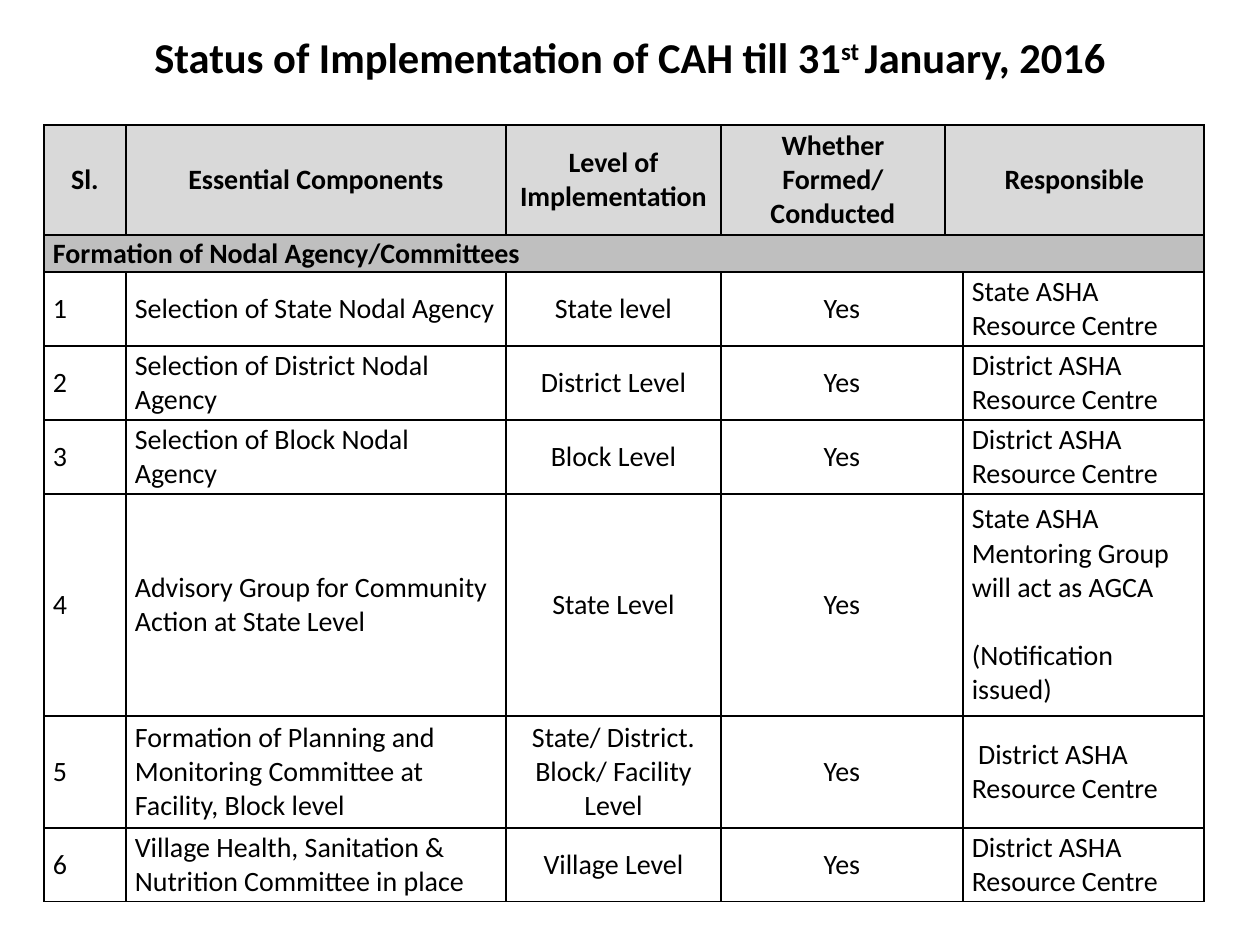
from lxml import etree
from pptx import Presentation
from pptx import util as u
from pptx.dml.color import RGBColor
from pptx.enum import text
from pptx.oxml import ns

PX = 914400 // 126
COLUMNS = [82, 380, 215, 224, 18, 241]
ROWS = [110, 37, 74, 74, 74, 222, 112, 74]
HEADINGS = ["Sl.", "Essential Components", "Level of Implementation",
            "Whether Formed/ Conducted", "Responsible"]
SECTION = "Formation of Nodal Agency/Committees"
DISTRICT = "District ASHA Resource Centre"
COMMITTEES = [
    ("Selection of State Nodal Agency", "State level", "State ASHA Resource Centre"),
    ("Selection of District Nodal Agency", "District Level", DISTRICT),
    ("Selection of Block Nodal Agency", "Block Level", DISTRICT),
    ("Advisory Group for Community Action at State Level", "State Level",
     "State ASHA Mentoring Group will act as AGCA\n(Notification issued)"),
    ("Formation of Planning and Monitoring Committee at Facility, Block level",
     "State/ District. Block/ Facility Level", " " + DISTRICT),
    ("Village Health, Sanitation & Nutrition Committee in place",
     "Village Level", DISTRICT),
]


def px(length):
    return u.Emu(length * PX)


def color(value):
    return RGBColor.from_string(value)


class SlideBuilder:
    font = "Calibri"
    ink = "000000"
    header_fill = "D9D9D9"
    section_fill = "BFBFBF"
    title_size = 24.3
    body_size = 16

    def __init__(self, page):
        self.page = page

    def style(self, para, size, bold=False, centered=False):
        para.font.name = self.font
        para.font.size = u.Pt(size)
        para.font.bold = bold
        para.font.color.rgb = color(self.ink)
        para.alignment = text.PP_ALIGN.CENTER if centered else text.PP_ALIGN.LEFT

    def title(self, left, top, width, height, spans):
        """Add a heading from (text, is_superscript) pairs."""
        frame = self.page.shapes.add_textbox(
            px(left), px(top), px(width), px(height)).text_frame
        frame.word_wrap = True
        frame.margin_top = px(5)
        para = frame.paragraphs[0]
        self.style(para, self.title_size, bold=True, centered=True)
        for words, raised in spans:
            span = para.add_run()
            span.text = words
            if raised:
                span.font._element.set("baseline", "30000")

    def table(self, left, top, columns, rows):
        table = self.page.shapes.add_table(
            len(rows), len(columns), px(left), px(top),
            px(sum(columns)), px(sum(rows))).table
        table.first_row = table.horz_banding = False
        for column, width in zip(table.columns, columns):
            column.width = px(width)
        for row, height in zip(table.rows, rows):
            row.height = px(height)
        for cell in table.iter_cells():
            self.borders(cell)
            cell.fill.background()
        return table

    def borders(self, cell):
        properties = cell._tc.get_or_add_tcPr()
        for side in ("a:lnL", "a:lnR", "a:lnT", "a:lnB"):
            line = etree.SubElement(properties, ns.qn(side), w=str(u.Pt(1)))
            fill = etree.SubElement(line, ns.qn("a:solidFill"))
            etree.SubElement(fill, ns.qn("a:srgbClr"), val=self.ink)

    def cell(self, cell, words, bold=False, centered=False, fill=None):
        """Fill a cell; each line of words is a paragraph, a line apart."""
        cell.margin_left = cell.margin_right = px(9)
        cell.margin_top = cell.margin_bottom = 0
        cell.vertical_anchor = text.MSO_ANCHOR.MIDDLE
        cell.text = words
        for index, para in enumerate(cell.text_frame.paragraphs):
            self.style(para, self.body_size, bold, centered)
            if index:
                para.space_before = u.Pt(19.5)
        if fill:
            cell.fill.solid()
            cell.fill.fore_color.rgb = color(fill)


def main():
    deck = Presentation()
    deck.slide_width, deck.slide_height = u.Inches(10), u.Inches(7.5)
    builder = SlideBuilder(deck.slides.add_slide(deck.slide_layouts[6]))

    builder.title(63, 26, 1134, 90, [
        ("Status of Implementation of CAH till 31", False),
        ("st ", True), ("January, 2016", False)])

    table = builder.table(44, 125, COLUMNS, ROWS)
    table.cell(0, 4).merge(table.cell(0, 5))
    for index, heading in enumerate(HEADINGS):
        builder.cell(table.cell(0, index), heading, bold=True, centered=True,
                     fill=builder.header_fill)

    table.cell(1, 0).merge(table.cell(1, 5))
    builder.cell(table.cell(1, 0), SECTION, bold=True, fill=builder.section_fill)

    for number, (component, level, responsible) in enumerate(COMMITTEES, 1):
        row = number + 1
        table.cell(row, 3).merge(table.cell(row, 4))
        builder.cell(table.cell(row, 0), str(number))
        builder.cell(table.cell(row, 1), component)
        builder.cell(table.cell(row, 2), level, centered=True)
        builder.cell(table.cell(row, 3), "Yes", centered=True)
        builder.cell(table.cell(row, 5), responsible)

    deck.save("out.pptx")


if __name__ == "__main__":
    main()
